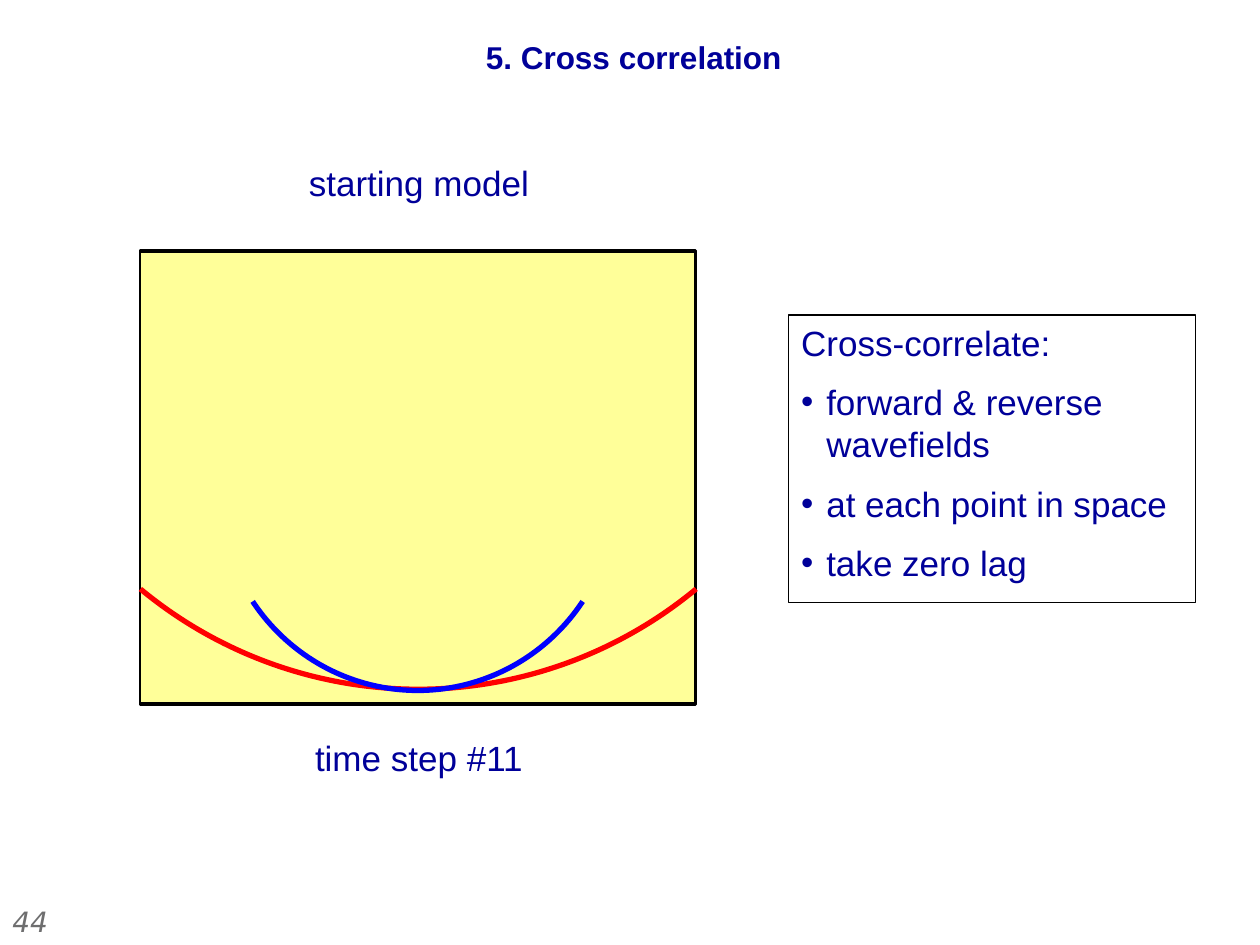
from lxml import etree
from pptx import Presentation
from pptx.dml.color import RGBColor
from pptx.enum.shapes import MSO_SHAPE
from pptx.enum.text import MSO_ANCHOR, PP_ALIGN
from pptx.oxml.ns import qn
from pptx.util import Inches, Pt

RECT, ARC = MSO_SHAPE.RECTANGLE, MSO_SHAPE.ARC
TOP = MSO_ANCHOR.TOP
LEFT, CENTER = PP_ALIGN.LEFT, PP_ALIGN.CENTER

NAVY = RGBColor(0x00, 0x00, 0x99)
GRAY = RGBColor(0x6E, 0x6E, 0x6F)
YELLOW = RGBColor(0xFF, 0xFF, 0x99)
RED = RGBColor(0xFF, 0x00, 0x00)
BLUE = RGBColor(0x00, 0x00, 0xFF)
BLACK = RGBColor(0x00, 0x00, 0x00)

BODY = {"name": "Arial", "size": Pt(20)}
TITLE = {"name": "Arial", "size": Pt(18), "bold": True}
NUMBER = {"name": "DejaVu Sans", "size": Pt(16), "italic": True}

LABELS = [
    ("44", (0, 7.13, 0.79, 0.37), NUMBER, GRAY, LEFT),
    ("5. Cross correlation", (0.81, 0.29, 8.44, 0.63), TITLE, NAVY, CENTER),
    ("starting model", (2.17, 1.23, 2.31, 0.43), BODY, NAVY, CENTER),
    ("time step #11", (2.17, 5.8, 2.31, 0.43), BODY, NAVY, CENTER),
]
MODEL = (1.11, 1.99, 4.41, 3.59)
FRAME = (1.11, 2.0, 4.41, 3.59)
NOTE = (6.26, 2.5, 3.23, 2.28)
NOTE_HEAD = "Cross-correlate:"
NOTE_POINTS = ["forward & reverse wavefields", "at each point in space", "take zero lag"]

WAVEFRONTS = [
    ((-0.15, -1.51, 6.94, 6.98), 39.3, RED),
    ((1.74, 2.3, 3.15, 3.18), 56, BLUE),
]
ARC_UNITS_PER_DEGREE = 0.6


def write(p, text, font, color):
    r = p.add_run()
    r.text = text
    for key, value in font.items():
        setattr(r.font, key, value)
    r.font.color.rgb = color


def add_label(s, text, box, font, color, align):
    tf = s.shapes.add_textbox(*map(Inches, box)).text_frame
    tf.word_wrap = True
    p = tf.paragraphs[0]
    p.alignment = align
    if font is TITLE:
        p.line_spacing = 0.9
    write(p, text, font, color)


def add_outlined(s, kind, box, line_width, line_color=BLACK, fill=None):
    sp = s.shapes.add_shape(kind, *map(Inches, box))
    sp.shadow.inherit = False
    if fill is None:
        sp.fill.background()
    else:
        sp.fill.solid()
        sp.fill.fore_color.rgb = fill
    sp.line.color.rgb = line_color
    sp.line.width = Pt(line_width)
    return sp


def add_wavefront(s, box, half_angle, color):
    sp = add_outlined(s, ARC, box, 3, color)
    for i, angle in enumerate((90 - half_angle, 90 + half_angle)):
        sp.adjustments[i] = angle * ARC_UNITS_PER_DEGREE


def add_note(s):
    tf = add_outlined(s, RECT, NOTE, 0.75).text_frame
    tf.word_wrap = True
    tf.vertical_anchor = TOP
    for i, text in enumerate([NOTE_HEAD] + NOTE_POINTS):
        p = tf.add_paragraph() if i else tf.paragraphs[0]
        p.alignment = LEFT
        if i:
            p.space_before = Pt(10)
            pPr = p._p.get_or_add_pPr()
            pPr.set("marL", str(Inches(0.2)))
            pPr.set("indent", str(-Inches(0.2)))
            etree.SubElement(pPr, qn("a:buFont")).set("typeface", "Arial")
            etree.SubElement(pPr, qn("a:buChar")).set("char", "•")
        write(p, text, BODY, NAVY)


def main():
    prs = Presentation()
    prs.slide_width, prs.slide_height = Inches(10), Inches(7.5)
    s = prs.slides.add_slide(prs.slide_layouts[6])
    add_outlined(s, RECT, MODEL, 1.5, fill=YELLOW)
    add_outlined(s, RECT, FRAME, 1.5)
    for wavefront in WAVEFRONTS:
        add_wavefront(s, *wavefront)
    for label in LABELS:
        add_label(s, *label)
    add_note(s)
    prs.save("out.pptx")


if __name__ == "__main__":
    main()
